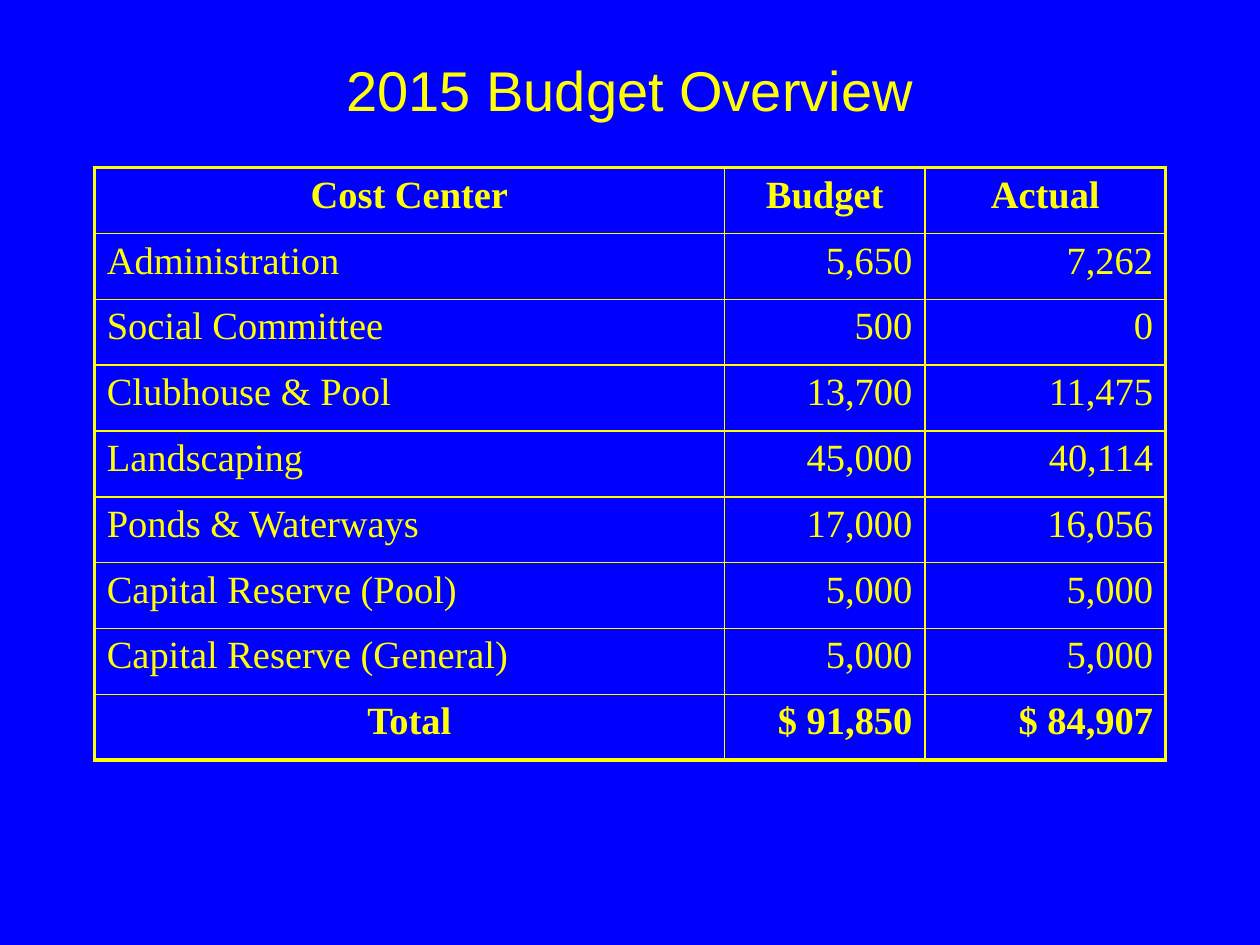
import pptx
import pptx.dml.color
import pptx.enum.text
import pptx.util
import lxml.etree
from pptx.util import Cm
from pptx.oxml.ns import qn

BLUE = "0000FF"
YELLOW = "FFFF00"
ALIGN = pptx.enum.text.PP_ALIGN
ANCHOR = pptx.enum.text.MSO_ANCHOR
COLUMN_SHARES = (5, 1.59, 1.91)
BUDGET = (
    ("Cost Center", "Budget", "Actual"),
    ("Administration", "5,650", "7,262"),
    ("Social Committee", "500", "0"),
    ("Clubhouse & Pool", "13,700", "11,475"),
    ("Landscaping", "45,000", "40,114"),
    ("Ponds & Waterways", "17,000", "16,056"),
    ("Capital Reserve (Pool)", "5,000", "5,000"),
    ("Capital Reserve (General)", "5,000", "5,000"),
    ("Total", "$ 91,850", "$ 84,907"),
)


def color(value):
    return pptx.dml.color.RGBColor.from_string(value)


def write(text_frame, text, font_name, size, alignment, bold=False):
    text_frame.text = text
    paragraph = text_frame.paragraphs[0]
    paragraph.alignment = alignment
    font = paragraph.runs[0].font
    font.name = font_name
    font.size = pptx.util.Pt(size)
    font.bold = bold
    font.color.rgb = color(YELLOW)


def set_border(cell, side, width):
    properties = cell._tc.get_or_add_tcPr()
    line = lxml.etree.SubElement(properties, qn("a:ln" + side), w=str(pptx.util.Pt(width)))
    fill = lxml.etree.SubElement(line, qn("a:solidFill"))
    lxml.etree.SubElement(fill, qn("a:srgbClr"), val=YELLOW)


def add_title(slide, left, top, width, height):
    shape = slide.shapes.add_textbox(left, top, width, height)
    shape.text_frame.word_wrap = True
    shape.text_frame.vertical_anchor = ANCHOR.MIDDLE
    write(shape.text_frame, "2015 Budget Overview", "Arial", 32, ALIGN.CENTER)


def add_budget_table(slide, left, top, width, height):
    last_row = len(BUDGET) - 1
    last_column = len(COLUMN_SHARES) - 1
    table = slide.shapes.add_table(
        len(BUDGET), len(COLUMN_SHARES), left, top, width, height
    ).table
    table.first_row = False
    table.horz_banding = False
    for column, share in zip(table.columns, COLUMN_SHARES):
        column.width = int(width * share / sum(COLUMN_SHARES))
    for i, values in enumerate(BUDGET):
        for j, value in enumerate(values):
            cell = table.cell(i, j)
            outer_sides = {"L": j == 0, "R": j == last_column, "T": i == 0, "B": i == last_row}
            for side, is_outer in outer_sides.items():
                set_border(cell, side, 2.25 if is_outer else 1)
            cell.fill.background()
            bold = i in (0, last_row)
            if i == 0 or (bold and j == 0):
                alignment = ALIGN.CENTER
            else:
                alignment = ALIGN.LEFT if j == 0 else ALIGN.RIGHT
            write(cell.text_frame, value, "Times New Roman", 22, alignment, bold)


def main():
    presentation = pptx.Presentation()
    presentation.slide_width = Cm(25.4)
    presentation.slide_height = Cm(19.05)
    slide = presentation.slides.add_slide(presentation.slide_layouts[6])
    slide.background.fill.solid()
    slide.background.fill.fore_color.rgb = color(BLUE)
    add_title(slide, Cm(1.9), Cm(1.07), Cm(21.6), Cm(1.47))
    add_budget_table(slide, Cm(1.9), Cm(3.38), Cm(21.6), Cm(11.95))
    presentation.save("out.pptx")


if __name__ == "__main__":
    main()
